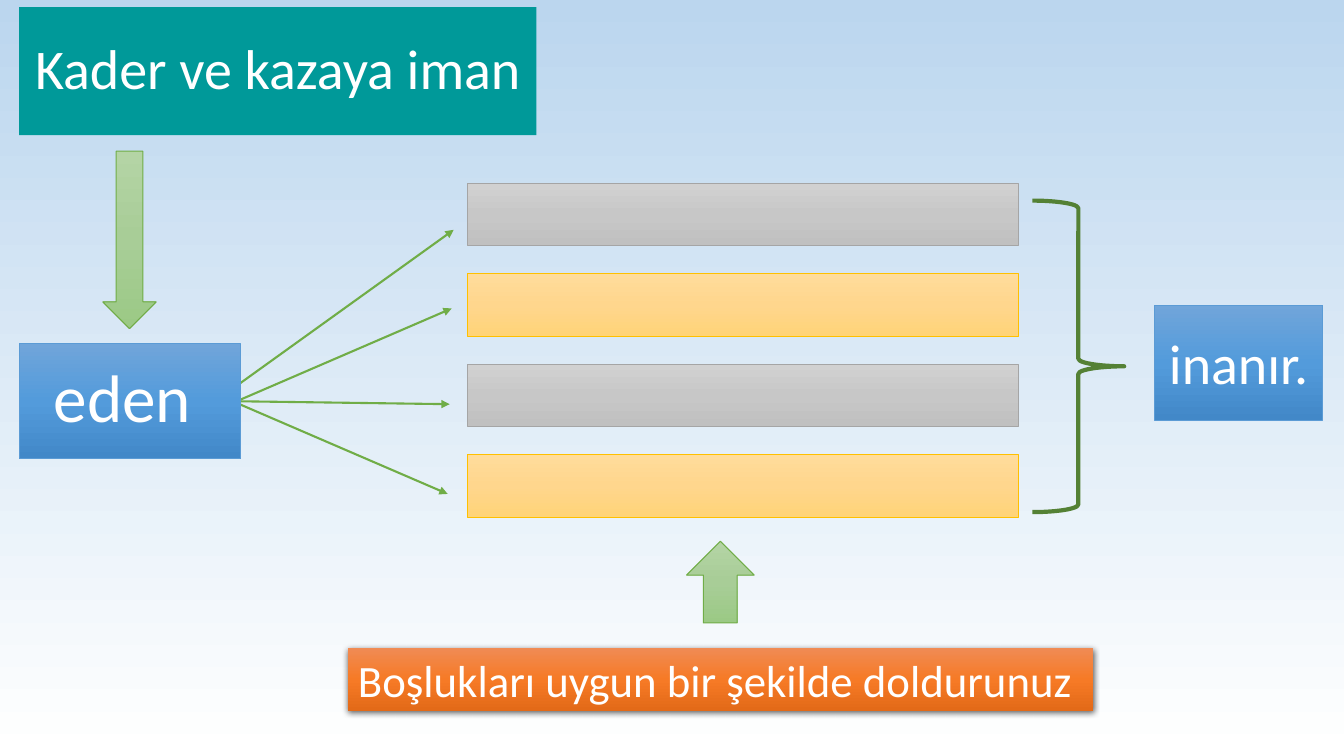
"""Build the fill-in-the-blanks slide on belief in fate."""
import copy
import dataclasses

import pptx
import pptx.dml.color
import pptx.enum.dml
import pptx.enum.shapes
import pptx.enum.text
import pptx.oxml
import pptx.oxml.ns
import pptx.util

Inches = pptx.util.Inches
Pt = pptx.util.Pt
SHAPE = pptx.enum.shapes.MSO_SHAPE
TEXT = pptx.enum.text


@dataclasses.dataclass(frozen=True)
class Theme:
    """Colours, gradients and type sizes of the slide."""
    font: str = "Calibri"
    white: str = "FFFFFF"
    teal: str = "009999"
    brace: str = "548135"
    leaf: str = "70AD47"
    sky: tuple = ("FFFFFF", "BBD6EE")
    gray: tuple = ("D1D1D1", "C7C7C7", "C0C0C0")
    gold: tuple = ("FFDC9B", "FFD68D", "FFD478")
    green: tuple = ("B4D4A5", "A8CD97", "9BC985")
    orange: tuple = ("F08B54", "F67A26", "E36A18")
    blue: tuple = ("70A5DA", "539BDB", "4288C8")
    edges: tuple = ("A5A5A5", "FFC000", "5B9BD5")
    small: int = 32
    mid: int = 40
    large: int = 48


THEME = Theme()
GRAY_EDGE, GOLD_EDGE, BLUE_EDGE = THEME.edges


def color(code):
    """Turn a hex code into a colour."""
    return pptx.dml.color.RGBColor.from_string(code)


def assign(thing, values):
    """Set each named value on an object."""
    for name, value in values.items():
        setattr(thing, name, value)


def blend(fill, root, tints, angle):
    """Fill with evenly spaced gradient tints."""
    fill.gradient()
    fill.gradient_angle = angle
    stops = next(root.iter(pptx.oxml.ns.qn("a:gsLst")))
    for _ in tints[2:]:
        stops.append(copy.deepcopy(stops[0]))
    for rank, (stop, tint) in enumerate(zip(fill.gradient_stops, tints)):
        stop.color.rgb = color(tint)
        stop.position = rank / (len(tints) - 1)


def stroke(line, edge, width):
    """Give a line its colour and width."""
    line.color.rgb = color(edge)
    line.width = Pt(width)


def draw(slide, kind, box, tints=None, edge=None, width=0.75):
    """Add a preset shape in a box."""
    shape = slide.shapes.add_shape(kind, *map(Inches, box))
    shape.shadow.inherit = False
    if tints:
        blend(shape.fill, shape.element, tints, 270)
    else:
        shape.fill.background()
    if edge:
        stroke(shape.line, edge, width)
    else:
        shape.line.fill.background()
    return shape


def write(shape, runs, space=None):
    """Set centred white runs of text and size."""
    frame = shape.text_frame
    assign(frame, {
        "word_wrap": True,
        "auto_size": TEXT.MSO_AUTO_SIZE.NONE,
        "vertical_anchor": TEXT.MSO_ANCHOR.MIDDLE,
        "margin_left": Inches(0.1),
        "margin_right": Inches(0.1),
        "margin_top": Inches(0.05),
        "margin_bottom": Inches(0.05),
    })
    para = frame.paragraphs[0]
    assign(para, {"alignment": TEXT.PP_ALIGN.CENTER, "line_spacing": space})
    for words, size in runs:
        run = para.add_run()
        run.text = words
        assign(run.font, {"name": THEME.font, "size": Pt(size)})
        run.font.color.rgb = color(THEME.white)


def head(slide, box):
    """Place the title in its teal box."""
    title = slide.shapes.title
    left, top, width, height = map(Inches, box)
    assign(title, {"left": left, "top": top, "width": width, "height": height})
    title.fill.solid()
    title.fill.fore_color.rgb = color(THEME.teal)
    write(title, [("Kader ve kazaya iman ", THEME.mid)], 0.9)


def blanks(slide, box):
    """Stack four blank bars in two turning colours."""
    left, top, width, height = box
    count, tall = 4, 0.62
    step = (height - tall) / (count - 1)
    looks = [(THEME.gray, GRAY_EDGE), (THEME.gold, GOLD_EDGE)]
    for rank in range(count):
        spot = (left, top + rank * step, width, tall)
        draw(slide, SHAPE.RECTANGLE, spot, *looks[rank % 2])


def fan(slide, box):
    """Spread four thin arrows from left to right."""
    left, top, width, height = box
    rays = [(0, 1.61, 0), (0.02, 1.73, 0.78), (0.04, 1.7, 1.73), (0, 1.68, height)]
    for rank, (dent, start, end) in enumerate(rays):
        points = (left + dent, top + start, left + width - 0.02 * rank, top + end)
        ray = slide.shapes.add_connector(
            pptx.enum.shapes.MSO_CONNECTOR.STRAIGHT, *map(Inches, points))
        stroke(ray.line, THEME.leaf, 1.5)
        space = pptx.oxml.ns.nsdecls("a")
        ray.line._get_or_add_ln().append(
            pptx.oxml.parse_xml(f'<a:tailEnd {space} type="triangle"/>'))
        ray.element.spPr.append(pptx.oxml.parse_xml(f"<a:effectLst {space}/>"))


def task(slide, box):
    """Place the orange task bar and the arrow above it."""
    left, top, width, height = box
    bar = draw(slide, SHAPE.RECTANGLE, (left, top + height - 0.62, width, 0.62),
               THEME.orange)
    shade = pptx.oxml.parse_xml(
        f'<a:outerShdw {pptx.oxml.ns.nsdecls("a")} blurRad="{Pt(4.5)}" '
        f'dist="{Pt(1.5)}" dir="5400000" algn="ctr" rotWithShape="0">'
        '<a:srgbClr val="000000"><a:alpha val="63000"/></a:srgbClr></a:outerShdw>')
    bar.element.spPr.find(pptx.oxml.ns.qn("a:effectLst")).append(shade)
    write(bar, [("Boşlukları uygun bir şekilde doldurunuz ", THEME.small)])
    draw(slide, SHAPE.UP_ARROW, (left + 3.36, top, 0.67, 0.81),
         THEME.green, THEME.leaf)


def source(slide, box):
    """Place the down arrow and the first word below it."""
    left, top, width, height = box
    draw(slide, SHAPE.DOWN_ARROW, (left + 0.83, top, 0.53, 1.76),
         THEME.green, THEME.leaf)
    start = draw(slide, SHAPE.RECTANGLE, (left, top + height - 1.14, width, 1.14),
                 THEME.blue, BLUE_EDGE)
    write(start, [("eden ", THEME.large)], 0.9)


def result(slide, box):
    """Place the brace and the closing word."""
    left, top, width, height = box
    brace = draw(slide, SHAPE.RIGHT_BRACE, (left, top, 0.91, height),
                 edge=THEME.brace, width=3)
    brace.adjustments[0] = 0.083
    brace.adjustments[1] = 0.532
    close = draw(slide, SHAPE.RECTANGLE, (left + width - 1.67, top + 1.04, 1.67, 1.14),
                 THEME.blue, BLUE_EDGE)
    write(close, [("inanır.", THEME.mid), (" ", THEME.large)], 0.9)


def main():
    """Build and save the slide."""
    deck = pptx.Presentation()
    assign(deck, {"slide_width": Inches(13.33), "slide_height": Inches(7.5)})
    slide = deck.slides.add_slide(deck.slide_layouts[5])
    blend(slide.background.fill, slide.element, THEME.sky, 90)
    head(slide, (0.19, 0.07, 5.13, 1.27))
    blanks(slide, (4.64, 1.82, 5.46, 3.31))
    fan(slide, (2.26, 2.28, 2.24, 2.62))
    task(slide, (3.45, 5.37, 7.39, 1.68))
    source(slide, (0.19, 1.5, 2.2, 3.05))
    result(slide, (10.24, 1.99, 2.88, 3.09))
    deck.save("out.pptx")


if __name__ == "__main__":
    main()
